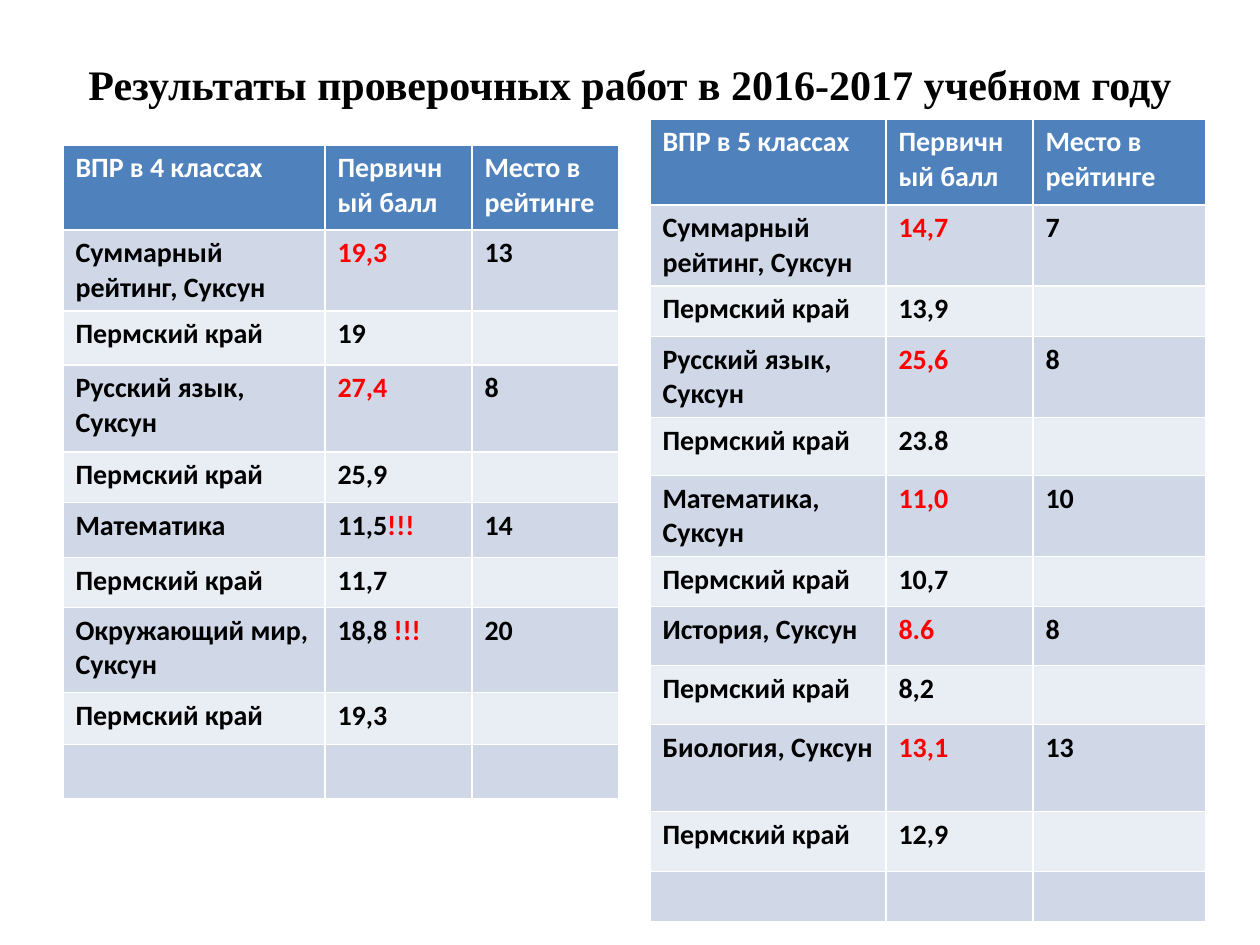
"""Build the slide with the test results of grades 4 and 5."""
from dataclasses import dataclass

from pptx import Presentation
from pptx.dml.color import RGBColor
from pptx.enum.text import MSO_ANCHOR, PP_ALIGN
from pptx.util import Inches, Pt


@dataclass
class Theme:
    header: str = "4F81BD"
    bands: tuple = ("E9EDF4", "D0D8E8")
    white: str = "FFFFFF"
    black: str = "000000"
    red: str = "FF0000"
    title_font: str = "Times New Roman"
    body_font: str = "Calibri"
    title_size: int = 24
    body_size: int = 16


theme = Theme()


def px(n):
    return round(n * Inches(1) / 126)


def add_run(p, text, font, size, color):
    r = p.add_run()
    r.text = text
    r.font.name = font
    r.font.size = Pt(size)
    r.font.bold = True
    r.font.color.rgb = RGBColor.from_string(color)


region = "Пермский край"
tables = [
    {
        "at": (63, 145),
        "cols": [262, 147, 147],
        "heights": [85, 81, 54, 87, 46, 55, 49, 85, 52, 54],
        "rows": [
            ("ВПР в 4 классах", "Первичный балл", "", "Место в рейтинге"),
            ("Суммарный рейтинг, Суксун", "", "19,3", "13"),
            (region, "19", "", ""),
            ("Русский язык, Суксун", "", "27,4", "8"),
            (region, "25,9", "", ""),
            ("Математика", "11,5", "!!!", "14"),
            (region, "11,7", "", ""),
            ("Окружающий мир, Суксун", "18,8 ", "!!!", "20"),
            (region, "19,3", "", ""),
            ("", "", "", ""),
        ],
    },
    {
        "at": (650, 119),
        "cols": [236, 147, 173],
        "heights": [86, 81, 49, 81, 58, 81, 49, 59, 59, 87, 60, 50],
        "rows": [
            ("ВПР в 5 классах", "Первичный балл", "", "Место в рейтинге"),
            ("Суммарный рейтинг, Суксун", "", "14,7", "7"),
            (region, "13,9", "", ""),
            ("Русский язык, Суксун", "", "25,6", "8"),
            (region, "23.8", "", ""),
            ("Математика, Суксун", "", "11,0", "10"),
            (region, "10,7", "", ""),
            ("История, Суксун", "", "8.6", "8"),
            (region, "8,2", "", ""),
            ("Биология, Суксун", "", "13,1", "13"),
            (region, "12,9", "", ""),
            ("", "", "", ""),
        ],
    },
]

prs = Presentation()
prs.slide_width, prs.slide_height = px(1260), px(945)
s = prs.slides.add_slide(prs.slide_layouts[6])

title = s.shapes.add_textbox(px(63), px(38), px(1134), px(91))
tf = title.text_frame
tf.word_wrap = True
tf.vertical_anchor = MSO_ANCHOR.MIDDLE
p = tf.paragraphs[0]
p.alignment = PP_ALIGN.CENTER
add_run(p, "Результаты проверочных работ в 2016-2017 учебном году",
        theme.title_font, theme.title_size, theme.black)

for spec_table in tables:
    left, top = spec_table["at"]
    cols, heights, rows = spec_table["cols"], spec_table["heights"], spec_table["rows"]
    table = s.shapes.add_table(len(rows), len(cols), px(left), px(top),
                               px(sum(cols)), px(sum(heights))).table
    for column, width in zip(table.columns, cols):
        column.width = px(width)
    for i, (subject, score, red_score, place) in enumerate(rows):
        table.rows[i].height = px(heights[i])
        fill = theme.bands[i % 2] if i else theme.header
        color = theme.black if i else theme.white
        score_runs = [(t, c) for t, c in ((score, color), (red_score, theme.red)) if t]
        contents = [[(subject, color)], score_runs or [("", color)], [(place, color)]]
        for cell, runs in zip(table.rows[i].cells, contents):
            cell.fill.solid()
            cell.fill.fore_color.rgb = RGBColor.from_string(fill)
            for text, run_color in runs:
                add_run(cell.text_frame.paragraphs[0], text,
                        theme.body_font, theme.body_size, run_color)

prs.save("out.pptx")
